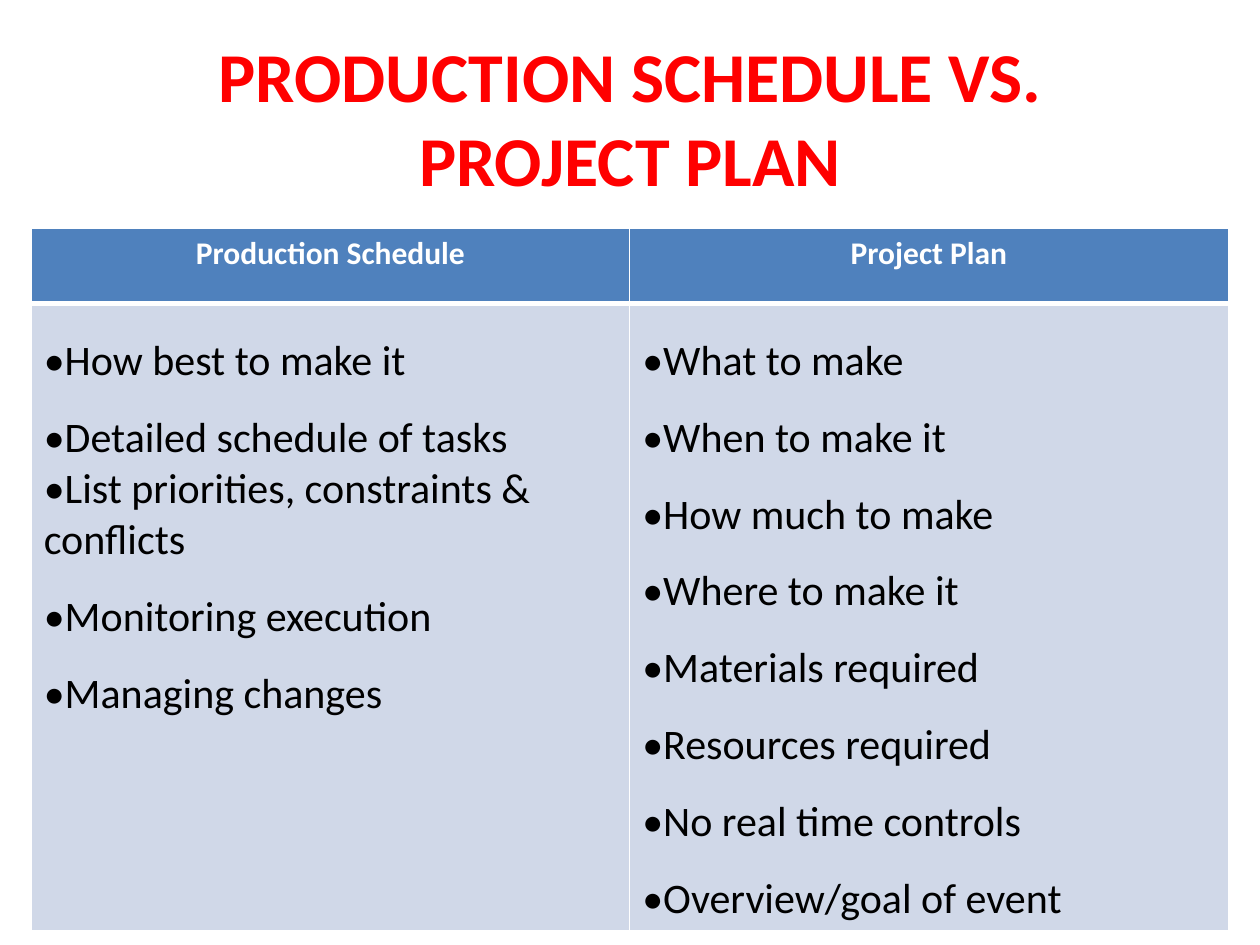
from lxml.etree import SubElement
from pptx import Presentation
from pptx.dml.color import RGBColor
from pptx.enum.text import MSO_ANCHOR, PP_ALIGN
from pptx.oxml.ns import qn
from pptx.util import Cm, Pt

FONT = "Calibri"
COLORS = {"title": "FF0000", "header": "4F81BD", "header_text": "FFFFFF",
          "body": "D0D8E8", "body_text": "000000", "border": "FFFFFF"}

TITLE = "PRODUCTION SCHEDULE VS.\nPROJECT PLAN"
COMPARISON = {
    "Production Schedule": [
        "How best to make it",
        "Detailed schedule of tasks",
        "List priorities, constraints & conflicts",
        "Monitoring execution",
        "Managing changes",
    ],
    "Project Plan": [
        "What to make",
        "When to make it",
        "How much to make",
        "Where to make it",
        "Materials required",
        "Resources required",
        "No real time controls",
        "Overview/goal of event",
    ],
}
SINGLE_SPACED = {"List priorities, constraints & conflicts"}
ROW_HEIGHTS = [Cm(1.52), Cm(11.61)]


def write(frame, items, *, size, color, bold=False, align=None, bullet=None, spacing=None):
    """Fill a text frame with one paragraph per item; a newline becomes a line break."""
    for index, item in enumerate(items):
        paragraph = frame.paragraphs[0] if index == 0 else frame.add_paragraph()
        paragraph.alignment = align
        if spacing:
            paragraph.line_spacing = 1.0 if item in SINGLE_SPACED else spacing
        if bullet:
            properties = paragraph._p.get_or_add_pPr()
            SubElement(properties, qn("a:buFont"), typeface=FONT)
            SubElement(properties, qn("a:buChar"), char=bullet)
        for number, line in enumerate(item.split("\n")):
            if number:
                paragraph.add_line_break()
            run = paragraph.add_run()
            run.text = line
            run.font.name = FONT
            run.font.size = Pt(size)
            run.font.bold = bold
            run.font.color.rgb = RGBColor.from_string(COLORS[color])


def style_cell(cell, color, **border_widths):
    """Set borders (lnL, lnR, lnT, lnB in points), then the fill that must follow them."""
    properties = cell._tc.get_or_add_tcPr()
    for side, width in border_widths.items():
        line = SubElement(properties, qn(f"a:{side}"), w=str(Pt(width)))
        fill = SubElement(line, qn("a:solidFill"))
        SubElement(fill, qn("a:srgbClr"), val=COLORS["border"])
    cell.fill.solid()
    cell.fill.fore_color.rgb = RGBColor.from_string(COLORS[color])


def main():
    deck = Presentation()
    deck.slide_width, deck.slide_height = Cm(25.4), Cm(19.05)
    slide = deck.slides.add_slide(deck.slide_layouts[5])

    title = slide.shapes.title
    title.left, title.top, title.width, title.height = Cm(1.27), Cm(0.76), Cm(22.86), Cm(3.18)
    title.text_frame.vertical_anchor = MSO_ANCHOR.MIDDLE
    write(title.text_frame, [TITLE], size=40, color="title", bold=True, align=PP_ALIGN.CENTER)

    table = slide.shapes.add_table(len(ROW_HEIGHTS), len(COMPARISON), Cm(0.63), Cm(4.6),
                                   Cm(24.13), sum(ROW_HEIGHTS)).table
    for row, height in zip(table.rows, ROW_HEIGHTS):
        row.height = height
    for column, (heading, points) in enumerate(COMPARISON.items()):
        header, body = table.cell(0, column), table.cell(1, column)
        style_cell(header, "header", lnL=1, lnR=1, lnT=1, lnB=3)
        style_cell(body, "body", lnL=1, lnR=1, lnT=3, lnB=1)
        write(header.text_frame, [heading], size=18, color="header_text", bold=True,
              align=PP_ALIGN.CENTER)
        write(body.text_frame, points, size=24, color="body_text", bullet="•", spacing=1.5)

    deck.save("out.pptx")


if __name__ == "__main__":
    main()
